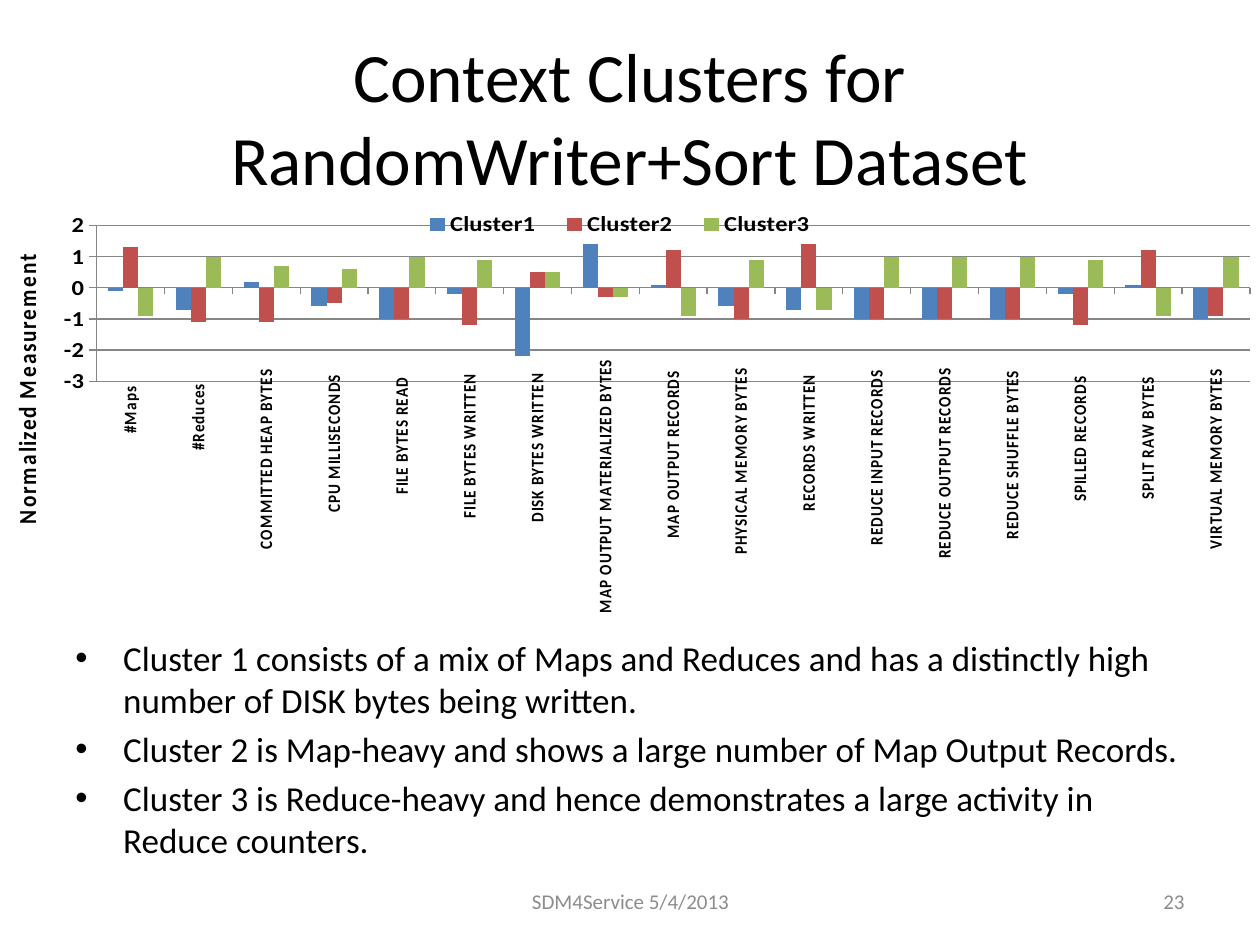
from lxml import etree
from pptx import Presentation, util as u
from pptx.chart.data import CategoryChartData
from pptx.dml.color import RGBColor
from pptx.enum import chart as charts, text
from pptx.oxml.ns import qn

COLORS = {"ink": "000000", "muted": "8C8C8C", "line": "868686",
          "Cluster1": "4F81BD", "Cluster2": "C0504D", "Cluster3": "9BBB59"}
COUNTERS = {
    "#Maps": (-0.1, 1.3, -0.9),
    "#Reduces": (-0.7, -1.1, 1),
    "COMMITTED HEAP BYTES": (0.2, -1.1, 0.7),
    "CPU MILLISECONDS": (-0.6, -0.5, 0.6),
    "FILE BYTES READ": (-1, -1, 1),
    "FILE BYTES WRITTEN": (-0.2, -1.2, 0.9),
    "DISK BYTES WRITTEN": (-2.2, 0.5, 0.5),
    "MAP OUTPUT MATERIALIZED BYTES": (1.4, -0.3, -0.3),
    "MAP OUTPUT RECORDS": (0.1, 1.2, -0.9),
    "PHYSICAL MEMORY BYTES": (-0.6, -1, 0.9),
    "RECORDS WRITTEN": (-0.7, 1.4, -0.7),
    "REDUCE INPUT RECORDS": (-1, -1, 1),
    "REDUCE OUTPUT RECORDS": (-1, -1, 1),
    "REDUCE SHUFFLE BYTES": (-1, -1, 1),
    "SPILLED RECORDS": (-0.2, -1.2, 0.9),
    "SPLIT RAW BYTES": (0.1, 1.2, -0.9),
    "VIRTUAL MEMORY BYTES": (-1, -0.9, 1),
}
FINDINGS = (
    "Cluster 1 consists of a mix of Maps and Reduces and has a distinctly high "
    "number of DISK bytes being written.",
    "Cluster 2 is Map-heavy and shows a large number of Map Output Records.",
    "Cluster 3 is Reduce-heavy and hence demonstrates a large activity in Reduce counters.",
)


def color(name):
    return RGBColor.from_string(COLORS[name])


def set_font(font, size, ink="ink", bold=False):
    font.name, font.size, font.bold = "Calibri", u.Pt(size), bold
    font.color.rgb = color(ink)


def write(paragraph, content, size=12, ink="ink", bold=False, align="LEFT", bullet=False):
    paragraph.alignment = getattr(text.PP_ALIGN, align)
    run = paragraph.add_run()
    run.text = content
    set_font(run.font, size, ink, bold)
    if bullet:
        paragraph.space_before = u.Pt(size * 0.2)
        properties = paragraph._p.get_or_add_pPr()
        properties.set("marL", str(u.Inches(0.38)))
        properties.set("indent", str(u.Inches(-0.38)))
        etree.SubElement(properties, qn("a:buFont"), typeface="Arial")
        etree.SubElement(properties, qn("a:buChar"), char="•")


def place(element, index, **shares):
    for old in element.findall(qn("c:layout")):
        element.remove(old)
    layout = etree.Element(qn("c:layout"))
    manual = etree.SubElement(layout, qn("c:manualLayout"))
    for key, value in shares.items():
        etree.SubElement(manual, qn(f"c:{key}"), val=str(value))
    element.insert(index, layout)


def rotate(body):
    body.set("rot", "-5400000")
    body.set("vert", "horz")


class Deck:
    """Slide builder on a grid of 20 columns by 15 rows."""

    def __init__(self):
        self.presentation = Presentation()
        self.presentation.slide_width = u.Inches(10)
        self.presentation.slide_height = u.Inches(7.5)
        self.slide = self.presentation.slides.add_slide(self.presentation.slide_layouts[6])

    def grid(self, left, top, columns, rows):
        column = self.presentation.slide_width / 20
        row = self.presentation.slide_height / 15
        return int(left * column), int(top * row), int(columns * column), int(rows * row)

    def text(self, area, *lines, anchor="MIDDLE", **style):
        frame = self.slide.shapes.add_textbox(*self.grid(*area)).text_frame
        frame.word_wrap = True
        frame.vertical_anchor = getattr(text.MSO_ANCHOR, anchor)
        for number, line in enumerate(lines):
            paragraph = frame.add_paragraph() if number else frame.paragraphs[0]
            write(paragraph, line, **style)

    def columns(self, area, names, rows, axis_title):
        data = CategoryChartData()
        data.categories = list(rows)
        for name, values in zip(names, zip(*rows.values())):
            data.add_series(name, values)
        chart = self.slide.shapes.add_chart(
            charts.XL_CHART_TYPE.COLUMN_CLUSTERED, *self.grid(*area), data).chart
        set_font(chart.font, 14, bold=True)
        chart.has_title = False
        plot = chart.plots[0]
        plot.gap_width, plot.overlap, plot.vary_by_categories = 150, 0, False
        for series in plot.series:
            series.invert_if_negative = False
            series.format.fill.solid()
            series.format.fill.fore_color.rgb = color(series.name)
        self.axes(chart, axis_title)
        chart.has_legend = True
        chart.legend.position = charts.XL_LEGEND_POSITION.RIGHT
        chart.legend.include_in_layout = False
        place(chart.legend._element, 1, xMode="edge", yMode="edge",
              x=0.32, y=0, w=0.34, h=0.08)
        place(chart._chartSpace.chart.plotArea, 0, layoutTarget="inner", xMode="edge",
              yMode="edge", x=0.073, y=0.043, w=0.919, h=0.444)

    def axes(self, chart, axis_title):
        category, value = chart.category_axis, chart.value_axis
        category.tick_label_position = charts.XL_TICK_LABEL_POSITION.LOW
        set_font(category.tick_labels.font, 10, bold=True)
        rotate(category._element.find(qn("c:txPr")).find(qn("a:bodyPr")))
        value.minimum_scale, value.maximum_scale, value.major_unit = -3, 2, 1
        value.has_major_gridlines = True
        for line in (category.format.line, value.format.line, value.major_gridlines.format.line):
            line.color.rgb = color("line")
            line.width = u.Pt(0.75)
        for axis in (category, value):
            axis.major_tick_mark = charts.XL_TICK_MARK.OUTSIDE
        frame = value.axis_title.text_frame
        write(frame.paragraphs[0], axis_title, size=14, bold=True, align="CENTER")
        rotate(frame._txBody.find(qn("a:bodyPr")))
        place(value.axis_title._element, 1, xMode="edge", yMode="edge", x=0, y=0.21)


def main():
    deck = Deck()
    deck.text((1, 0.6, 18, 2.5), "Context Clusters for RandomWriter+Sort Dataset",
              size=39.6, align="CENTER")
    deck.columns((0.08, 3.34, 19.92, 6.4), ("Cluster1", "Cluster2", "Cluster3"),
                 COUNTERS, "Normalized Measurement")
    deck.text((1, 10, 18, 3.66), *FINDINGS, anchor="TOP", size=20, bullet=True)
    deck.text((14.34, 13.9, 4.66, 0.8), "23", ink="muted", align="RIGHT")
    deck.text((6.84, 13.9, 6.34, 0.8), "SDM4Service 5/4/2013", ink="muted", align="CENTER")
    deck.presentation.save("out.pptx")


if __name__ == "__main__":
    main()
